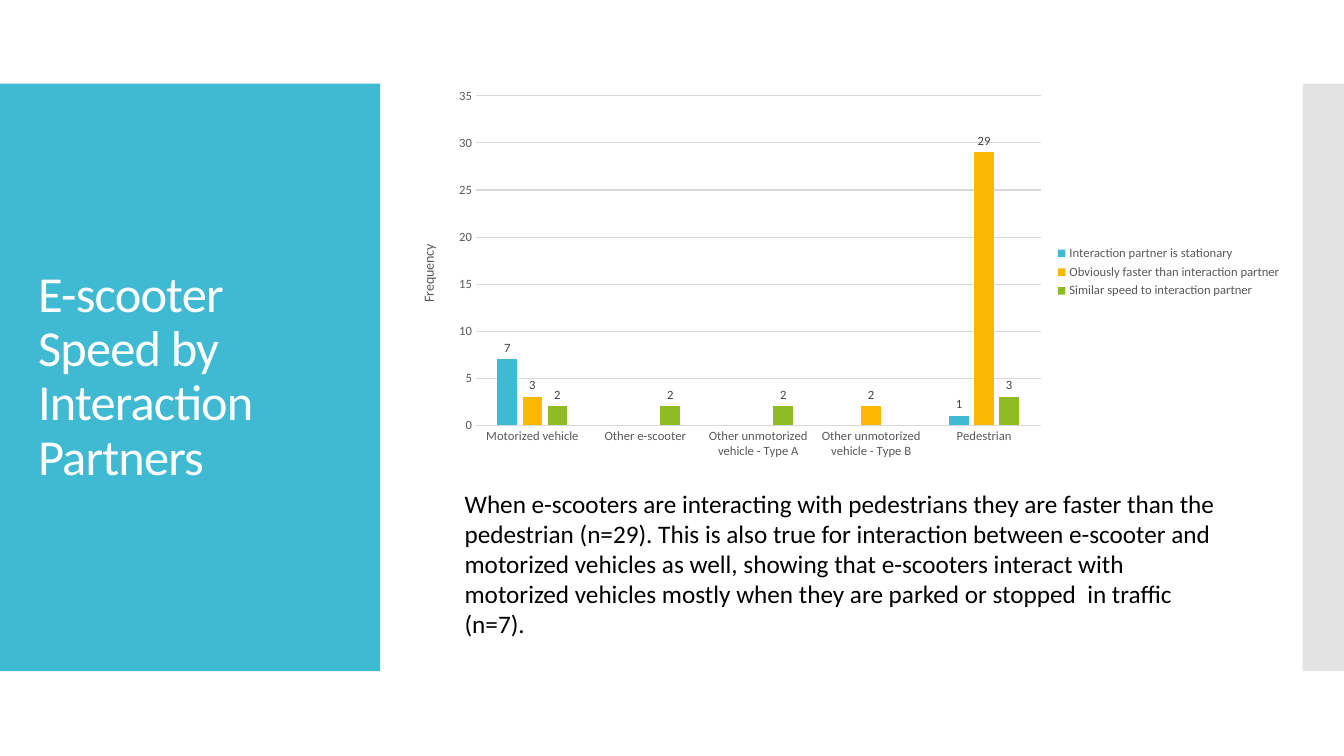
"""Build the slide on e-scooter speed by interaction partner."""
from dataclasses import dataclass
from typing import Optional

from lxml.etree import SubElement
from pptx import Presentation
from pptx.chart.data import CategoryChartData
from pptx.dml.color import RGBColor
from pptx.enum.chart import XL_CHART_TYPE, XL_LABEL_POSITION, XL_LEGEND_POSITION, XL_TICK_MARK
from pptx.enum.shapes import MSO_SHAPE
from pptx.enum.text import MSO_ANCHOR
from pptx.oxml import parse_xml
from pptx.oxml.ns import nsdecls, qn
from pptx.util import Emu, Pt

PX = 9144


@dataclass(frozen=True)
class Theme:
    font: str = "Calibri"
    teal: str = "40BAD2"
    amber: str = "FAB900"
    green: str = "90BB23"
    side: str = "C8C8C8"
    white: str = "FFFFFF"
    black: str = "000000"
    axis_text: str = "595959"
    label_text: str = "404040"
    grid: str = "D9D9D9"
    title_size: int = 36
    body_size: int = 18
    axis_title_size: int = 10
    chart_size: int = 9


T = Theme()


@dataclass(frozen=True)
class Box:
    x: int
    y: int
    w: int
    h: int

    def emu(self) -> tuple[Emu, ...]:
        return tuple(Emu(v * PX) for v in (self.x, self.y, self.w, self.h))


@dataclass(frozen=True)
class Panel:
    box: Box
    color: str
    alpha: int = 100


@dataclass(frozen=True)
class TextBlock:
    box: Box
    text: str
    size: int
    color: str
    anchor: MSO_ANCHOR = MSO_ANCHOR.TOP
    line_spacing: float = 1.0
    tracking: int = 0


@dataclass(frozen=True)
class Series:
    name: str
    values: tuple[Optional[int], ...]
    color: str


PANELS = (
    Panel(Box(0, 83, 377, 583), T.teal),
    Panel(Box(1292, 83, 41, 583), T.side, alpha=50),
)
TEXTS = (
    TextBlock(Box(28, 123, 322, 503), "E-scooter Speed by Interaction Partners",
              T.title_size, T.white, MSO_ANCHOR.MIDDLE, 0.9, -60),
    TextBlock(Box(451, 479, 769, 162),
              "When e-scooters are interacting with pedestrians they are faster than the "
              "pedestrian (n=29). This is also true for interaction between e-scooter and "
              "motorized vehicles as well, showing that e-scooters interact with motorized "
              "vehicles mostly when they are parked or stopped  in traffic (n=7).",
              T.body_size, T.black),
)
CHART_BOX = Box(392, 80, 889, 380)
PLOT_LAYOUT = {"x": 0.09, "y": 0.04, "w": 0.63, "h": 0.86}
PARTNERS = ("Motorized vehicle", "Other e-scooter", "Other unmotorized vehicle - Type A",
            "Other unmotorized vehicle - Type B", "Pedestrian")
SPEEDS = (
    Series("Interaction partner is stationary", (7, None, None, None, 1), T.teal),
    Series("Obviously faster than interaction partner", (3, None, None, 2, 29), T.amber),
    Series("Similar speed to interaction partner", (2, 2, 2, None, 3), T.green),
)


def rgb(color: str) -> RGBColor:
    return RGBColor.from_string(color)


def style_font(font, size: int, color: str) -> None:
    font.name = T.font
    font.size = Pt(size)
    font.bold = False
    font.color.rgb = rgb(color)


def add_panel(slide, panel: Panel) -> None:
    s = slide.shapes.add_shape(MSO_SHAPE.RECTANGLE, *panel.box.emu())
    s.shadow.inherit = False
    s.fill.solid()
    s.fill.fore_color.rgb = rgb(panel.color)
    s.line.fill.background()
    if panel.alpha < 100:
        clr = s.fill._xPr.find(".//" + qn("a:srgbClr"))
        SubElement(clr, qn("a:alpha")).set("val", str(panel.alpha * 1000))


def add_text(slide, block: TextBlock) -> None:
    tf = slide.shapes.add_textbox(*block.box.emu()).text_frame
    tf.word_wrap = True
    tf.vertical_anchor = block.anchor
    p = tf.paragraphs[0]
    p.line_spacing = block.line_spacing
    style_font(p.font, block.size, block.color)
    r = p.add_run()
    r.text = block.text
    if block.tracking:
        r._r.get_or_add_rPr().set("spc", str(block.tracking))


def place_plot(chart) -> None:
    area = chart._chartSpace.chart.plotArea
    for old in area.findall(qn("c:layout")):
        area.remove(old)
    sizes = "".join(f'<c:{k} val="{v}"/>' for k, v in PLOT_LAYOUT.items())
    area.insert(0, parse_xml(
        f'<c:layout {nsdecls("c")}><c:manualLayout><c:layoutTarget val="inner"/>'
        f'<c:xMode val="edge"/><c:yMode val="edge"/>{sizes}</c:manualLayout></c:layout>'))


def style_axes(chart) -> None:
    for axis in (chart.category_axis, chart.value_axis):
        axis.major_tick_mark = axis.minor_tick_mark = XL_TICK_MARK.NONE
        style_font(axis.tick_labels.font, T.chart_size, T.axis_text)
    values = chart.value_axis
    values.minimum_scale, values.maximum_scale, values.major_unit = 0, 35, 5
    values.format.line.fill.background()
    for line in (chart.category_axis.format.line, values.major_gridlines.format.line):
        line.color.rgb = rgb(T.grid)
        line.width = Pt(0.75)
    p = values.axis_title.text_frame.paragraphs[0]
    p.text = "Frequency"
    style_font(p.font, T.axis_title_size, T.axis_text)


def add_speed_chart(slide) -> None:
    data = CategoryChartData()
    data.categories = PARTNERS
    for item in SPEEDS:
        data.add_series(item.name, item.values)
    chart = slide.shapes.add_chart(
        XL_CHART_TYPE.COLUMN_CLUSTERED, *CHART_BOX.emu(), data).chart
    style_font(chart.font, T.axis_title_size, T.black)
    chart.has_title = False
    chart.has_legend = True
    chart.legend.position = XL_LEGEND_POSITION.RIGHT
    chart.legend.include_in_layout = False
    style_font(chart.legend.font, T.chart_size, T.axis_text)
    plot = chart.plots[0]
    plot.gap_width, plot.overlap = 219, -27
    plot.vary_by_categories = False
    for series, item in zip(plot.series, SPEEDS):
        series.format.fill.solid()
        series.format.fill.fore_color.rgb = rgb(item.color)
        labels = series.data_labels
        labels.show_value = True
        labels.position = XL_LABEL_POSITION.OUTSIDE_END
        style_font(labels.font, T.chart_size, T.label_text)
    style_axes(chart)
    place_plot(chart)


def main() -> None:
    prs = Presentation()
    prs.slide_width, prs.slide_height = Emu(1333 * PX), Emu(750 * PX)
    slide = prs.slides.add_slide(prs.slide_layouts[6])
    for panel in PANELS:
        add_panel(slide, panel)
    for block in TEXTS:
        add_text(slide, block)
    add_speed_chart(slide)
    prs.save("out.pptx")


if __name__ == "__main__":
    main()
